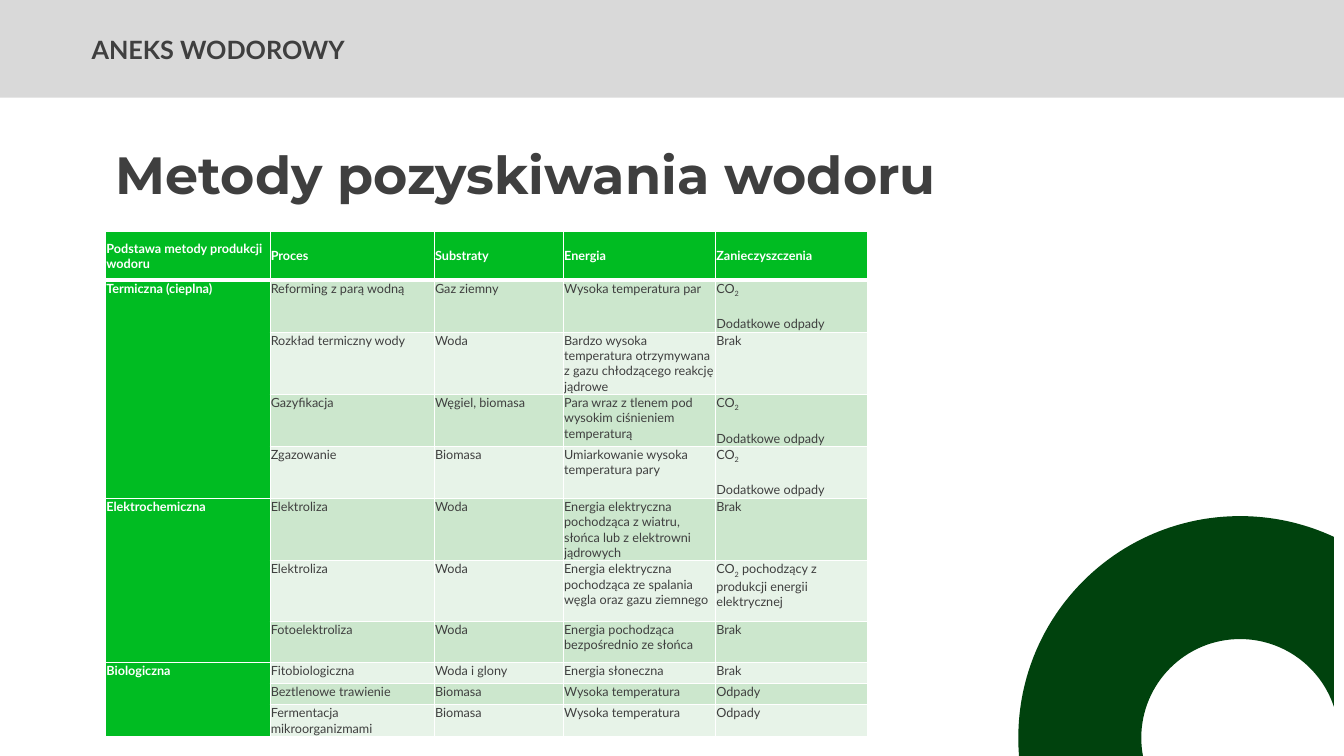
import math

from lxml import etree
from pptx import Presentation
from pptx import util as u
from pptx.dml.color import RGBColor
from pptx.enum import shapes, text
from pptx.oxml.ns import qn

WIDTH, HEIGHT = 13.33, 7.5
WHITE, DARK, GREY = "FFFFFF", "3F3F3F", "D9D9D9"
GREEN, DEEP_GREEN = "00BC22", "00420D"
BANDS = ["CCE7CD", "E7F3E8"]

COLUMN_WIDTHS = [1.63, 1.63, 1.28, 1.51, 1.51]
ROW_HEIGHTS = [0.48, 0.41, 0.6, 0.51, 0.41, 0.6, 0.6, 0.41, 0.21, 0.21, 0.31]
HEADINGS = ["Podstawa metody produkcji wodoru", "Proces", "Substraty",
            "Energia", "Zanieczyszczenia"]
CARBON_WASTE = "CO₂\nDodatkowe odpady"
METHODS = {
    "Termiczna (cieplna)": [
        ["Reforming z parą wodną", "Gaz ziemny", "Wysoka temperatura par", CARBON_WASTE],
        ["Rozkład termiczny wody", "Woda",
         "Bardzo wysoka temperatura otrzymywana z gazu chłodzącego reakcję jądrowe", "Brak"],
        ["Gazyfikacja", "Węgiel, biomasa",
         "Para wraz z tlenem pod wysokim ciśnieniem temperaturą", CARBON_WASTE],
        ["Zgazowanie", "Biomasa", "Umiarkowanie wysoka temperatura pary", CARBON_WASTE],
    ],
    "Elektrochemiczna": [
        ["Elektroliza", "Woda",
         "Energia elektryczna pochodząca z wiatru, słońca lub z elektrowni jądrowych", "Brak"],
        ["Elektroliza", "Woda",
         "Energia elektryczna pochodząca ze spalania węgla oraz gazu ziemnego",
         "CO₂ pochodzący z produkcji energii elektrycznej"],
        ["Fotoelektroliza", "Woda", "Energia pochodząca bezpośrednio ze słońca", "Brak"],
    ],
    "Biologiczna": [
        ["Fitobiologiczna", "Woda i glony", "Energia słoneczna", "Brak"],
        ["Beztlenowe trawienie", "Biomasa", "Wysoka temperatura", "Odpady"],
        ["Fermentacja mikroorganizmami", "Biomasa", "Wysoka temperatura", "Odpady"],
    ],
}


def color(value):
    return RGBColor.from_string(value)


def inches(*lengths):
    return [u.Inches(length) for length in lengths]


def paint(shape, fill):
    shape.fill.solid()
    shape.fill.fore_color.rgb = color(fill)
    shape.line.fill.background()
    shape.shadow.inherit = False


def add_run(paragraph, words, size, font, fill, bold):
    run = paragraph.add_run()
    run.text = words
    run.font.size = u.Pt(size)
    run.font.name = font
    run.font.bold = bold
    run.font.color.rgb = color(fill)
    return run


def add_header(slide, left, top, width, height):
    band = slide.shapes.add_shape(shapes.MSO_SHAPE.RECTANGLE,
                                  *inches(left, top, width, height))
    paint(band, GREY)
    label = slide.shapes.add_textbox(
        *inches(left + 0.81, top + 0.3 * height, 4.98, 0.4))
    label.text_frame.word_wrap = True
    add_run(label.text_frame.paragraphs[0], "ANEKS WODOROWY", 18, "Lato", DARK, True)


def add_title(slide, left, top, width, height):
    title = slide.shapes.title
    title.left, title.top, title.width, title.height = inches(left, top, width, height)
    frame = title.text_frame
    frame.word_wrap = True
    frame.auto_size = text.MSO_AUTO_SIZE.NONE
    frame.vertical_anchor = text.MSO_ANCHOR.MIDDLE
    paragraph = frame.paragraphs[0]
    paragraph.alignment = text.PP_ALIGN.LEFT
    paragraph.line_spacing = 0.8
    add_run(paragraph, "Metody pozyskiwania wodoru", 37.4, "Montserrat", DARK, True)


def add_ring(slide, center_x, center_y, outer, inner, right, bottom):
    """Ring cut off by a right and a bottom edge, its arcs split at the axes."""
    def stops(radius):
        return [math.acos((right - center_x) / radius), math.pi / 2, math.pi,
                math.pi + math.asin((bottom - center_y) / radius)]

    def point(radius, angle, pull=0):
        x = math.cos(angle) - pull * math.sin(angle)
        y = math.sin(angle) + pull * math.cos(angle)
        return tuple(inches(center_x + radius * x, center_y - radius * y))

    arcs = [(outer, stops(outer)), (inner, stops(inner)[::-1])]
    anchors = [point(radius, angle) for radius, angles in arcs for angle in angles]
    builder = slide.shapes.build_freeform(*anchors[0])
    builder.add_line_segments(anchors[1:], close=True)
    ring = builder.convert_to_shape()
    paint(ring, DEEP_GREEN)

    # Bend the straight segments of both arcs
    segments = list(ring._element.iter(qn("a:lnTo")))
    for (radius, angles), first in zip(arcs, (0, len(angles_outer := arcs[0][1]))):
        for index, (start, end) in enumerate(zip(angles, angles[1:])):
            pull = 4 / 3 * math.tan((end - start) / 4)
            segment = segments[first + index]
            segment.tag = qn("a:cubicBezTo")
            controls = [point(radius, start, pull), point(radius, end, -pull)]
            for position, (x, y) in enumerate(controls):
                control = etree.Element(qn("a:pt"), x=str(x - ring.left), y=str(y - ring.top))
                segment.insert(position, control)


def set_borders(cell, top, bottom):
    properties = cell._tc.get_or_add_tcPr()
    sides = [("a:lnL", 1), ("a:lnR", 1), ("a:lnT", top), ("a:lnB", bottom)]
    for index, (side, points) in enumerate(sides):
        line = etree.Element(qn(side), w=str(u.Pt(points)))
        fill = etree.SubElement(line, qn("a:solidFill"))
        etree.SubElement(fill, qn("a:srgbClr"), val=WHITE)
        properties.insert(index, line)


def write_cell(cell, words, font_color, bold):
    frame = cell.text_frame
    lines = words.split("\n")
    for index, line in enumerate(lines):
        paragraph = frame.add_paragraph() if index else frame.paragraphs[0]
        paragraph.line_spacing = 1.01
        paragraph.space_before = u.Pt(5 if index else 0)
        paragraph.space_after = u.Pt(5 if index == len(lines) - 1 else 8)
        for part in line.replace("₂", "|₂|").split("|"):
            if part:
                run = add_run(paragraph, part.replace("₂", "2"), 9, "Lato", font_color, bold)
                if part == "₂":
                    run._r.get_or_add_rPr().set("baseline", "-25000")


def add_methods_table(slide, left, top):
    rows, columns = len(ROW_HEIGHTS), len(COLUMN_WIDTHS)
    table = slide.shapes.add_table(
        rows, columns, *inches(left, top, sum(COLUMN_WIDTHS), sum(ROW_HEIGHTS))).table
    table.first_row = table.horz_banding = False
    for column, width in zip(table.columns, COLUMN_WIDTHS):
        column.width = u.Inches(width)
    for row, height in zip(table.rows, ROW_HEIGHTS):
        row.height = u.Inches(height)

    # Fills, margins and borders
    for row in range(rows):
        for column in range(columns):
            cell = table.cell(row, column)
            cell.margin_left = cell.margin_right = u.Pt(0.4)
            cell.margin_top = cell.margin_bottom = u.Pt(0.4)
            cell.vertical_anchor = text.MSO_ANCHOR.TOP if row else text.MSO_ANCHOR.MIDDLE
            cell.fill.solid()
            is_heading = row == 0 or column == 0
            cell.fill.fore_color.rgb = color(GREEN if is_heading else BANDS[(row - 1) % 2])
            set_borders(cell, 3 if row == 1 else 1, 3 if row == 0 else 1)

    # Wording: headings, then one merged cell for each group of processes
    for column, heading in enumerate(HEADINGS):
        write_cell(table.cell(0, column), heading, WHITE, True)
    row = 1
    for method, processes in METHODS.items():
        group = table.cell(row, 0)
        group.merge(table.cell(row + len(processes) - 1, 0))
        write_cell(group, method, WHITE, True)
        for process in processes:
            for column, words in enumerate(process, start=1):
                write_cell(table.cell(row, column), words, DARK, False)
            row += 1


def main():
    presentation = Presentation()
    presentation.slide_width, presentation.slide_height = inches(WIDTH, HEIGHT)
    slide = presentation.slides.add_slide(presentation.slide_layouts[5])
    add_header(slide, 0, 0, WIDTH, 0.97)
    add_ring(slide, 12.3, 7.32, 2.2, 0.98, right=13.23, bottom=HEIGHT)
    add_methods_table(slide, 1.05, 2.3)
    add_title(slide, 1.05, 1.27, 8.4, 1.02)
    presentation.save("out.pptx")


if __name__ == "__main__":
    main()
